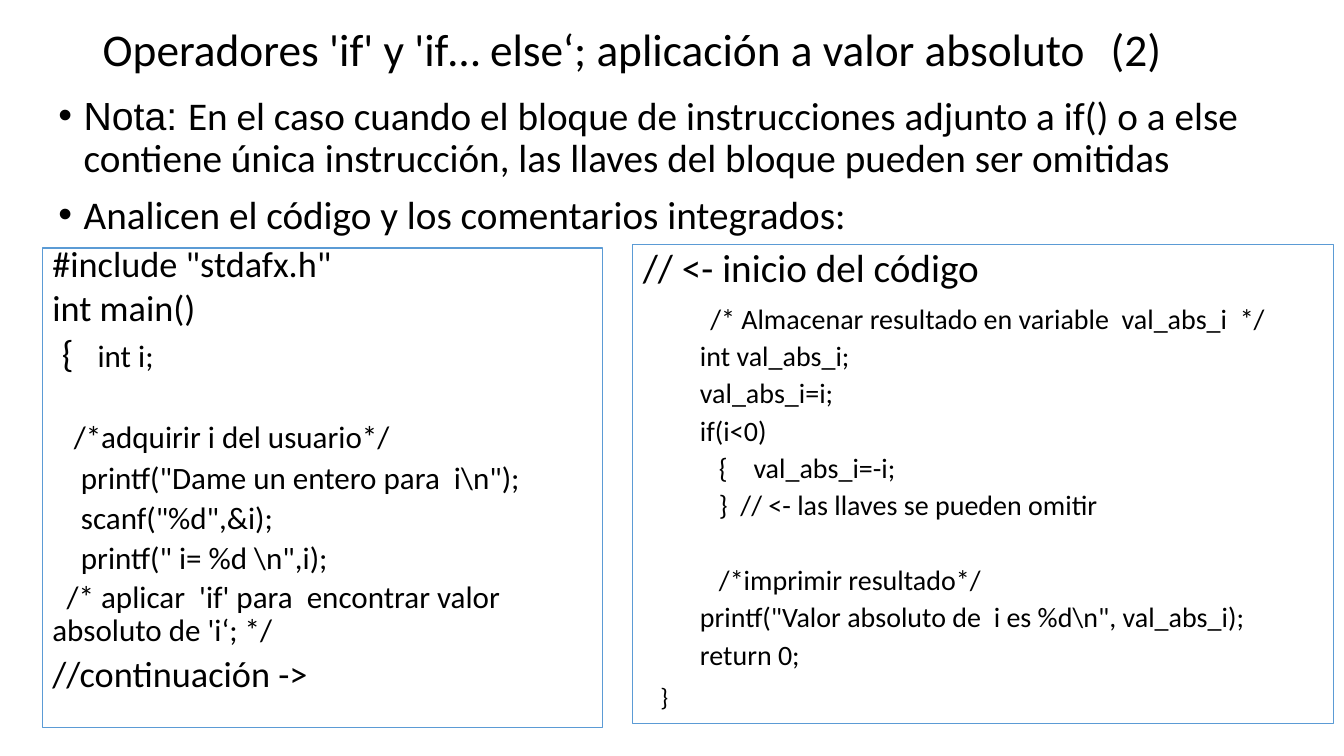
"""Slide on the 'if' and 'if… else' operators applied to the absolute value."""
from pptx import Presentation
from pptx.dml.color import RGBColor
from pptx.enum.shapes import MSO_SHAPE as Shape
from pptx.enum.text import MSO_ANCHOR as Anchor, PP_ALIGN as Align
from pptx.oxml.xmlchemy import OxmlElement
from pptx.util import Cm, Pt

COLORS = {"background": "FFFFFF", "text": "000000", "border": "5B9BD5"}
WRAPPED_COMMENT = "/* aplicar  'if' para  encontrar valor absoluto de 'i‘; */"


def add_paragraph(frame, text, size, spacing, before=0, margin=0, first=0):
    """Append one paragraph; margin and first-line indent are in centimetres."""
    paragraph = frame.paragraphs[0]
    if paragraph.runs:
        paragraph = frame.add_paragraph()
    paragraph.alignment = Align.LEFT
    paragraph.line_spacing = spacing
    paragraph.space_before = Pt(before)
    paragraph.font.name = "Calibri"
    paragraph.font.size = Pt(size)
    paragraph.font.color.rgb = RGBColor.from_string(COLORS["text"])
    properties = paragraph._p.get_or_add_pPr()
    properties.set("marL", str(Cm(margin)))
    properties.set("indent", str(Cm(first)))
    paragraph.add_run().text = text
    return paragraph


presentation = Presentation()
presentation.slide_width = Cm(33.87)
presentation.slide_height = Cm(19.05)
slide = presentation.slides.add_slide(presentation.slide_layouts[6])
slide.background.fill.solid()
slide.background.fill.fore_color.rgb = RGBColor.from_string(COLORS["background"])

title = slide.shapes.add_textbox(Cm(2.34), Cm(-0.03), Cm(29.21), Cm(2.67)).text_frame
title.word_wrap = True
title.vertical_anchor = Anchor.MIDDLE
add_paragraph(title, "Operadores 'if' y 'if… else‘; aplicación a valor absoluto\t(2)", 32.4, 0.9)

notes = [
    ("Nota: ", "En el caso cuando el bloque de instrucciones adjunto a if() o a else "
     "contiene única instrucción, las llaves del bloque pueden ser omitidas"),
    ("Analicen el código y los comentarios integrados:", ""),
]
body = slide.shapes.add_textbox(Cm(1.22), Cm(2.31), Cm(30.3), Cm(3.9)).text_frame
body.word_wrap = True
for lead, rest in notes:
    paragraph = add_paragraph(body, lead, 28, 0.9, 10, 0.64, -0.64)
    if rest:
        paragraph.runs[0].font.name = "Arial"
        paragraph.add_run().text = rest
    bullet_font = OxmlElement("a:buFont")
    bullet_font.set("typeface", "Arial")
    bullet = OxmlElement("a:buChar")
    bullet.set("char", "•")
    paragraph._p.get_or_add_pPr().extend([bullet_font, bullet])

# Each line: text, size, space before, left margin, first-line indent
input_code = [
    ('#include "stdafx.h"', 25.9, 10, 0, 0),
    ("int main()", 25.9, 10, 0, 0),
    ("{\tint i;", 22.2, 10, 1.14, -0.9),
    ("/*adquirir i del usuario*/", 22.2, 39, 0.54, 0),
    ('printf("Dame un entero para  i\\n");', 22.2, 10, 0.72, 0),
    ('scanf("%d",&i);', 22.2, 10, 0.72, 0),
    ('printf(" i= %d \\n",i);', 22.2, 10, 0.72, 0),
    (WRAPPED_COMMENT, 22.2, 5, 0, 0.36),
    ("//continuación ->", 25.9, 10, 0, 0),
]
result_code = [
    ("// <- inicio del código", 28, 10, 0, 0),
    ("/* Almacenar resultado en variable  val_abs_i  */", 20, 10, 1.7, 0),
    ("int val_abs_i;", 20, 5, 1.44, 0),
    ("val_abs_i=i;", 20, 5, 1.44, 0),
    ("if(i<0)", 20, 5, 1.44, 0),
    ("{\tval_abs_i=-i;", 20, 5, 2.79, -0.87),
    ("}  // <- las llaves se pueden omitir", 20, 5, 1.92, 0),
    ("/*imprimir resultado*/", 20, 32, 1.92, 0),
    ('printf("Valor absoluto de  i es %d\\n", val_abs_i);', 20, 5, 1.44, 0),
    ("return 0;", 20, 5, 1.44, 0),
    ("}", 18, 10, 0.44, 0),
]
code_boxes = [
    (1.07, 6.25, 14.12, 0.7, input_code),
    (15.95, 6.15, 17.65, 0.9, result_code),
]
for left, top, width, spacing, lines in code_boxes:
    box = slide.shapes.add_shape(Shape.RECTANGLE, Cm(left), Cm(top), Cm(width), Cm(12.09))
    box.shadow.inherit = False
    box.fill.background()
    box.line.color.rgb = RGBColor.from_string(COLORS["border"])
    box.line.width = Pt(0.75)
    frame = box.text_frame
    frame.word_wrap = True
    frame.vertical_anchor = Anchor.TOP
    for text, size, before, margin, first in lines:
        paragraph = add_paragraph(frame, text, size, spacing, before, margin, first)
        if text == WRAPPED_COMMENT:
            paragraph.line_spacing = 0.9
        if text == "{\tint i;":
            paragraph.runs[0].text = "{"
            paragraph.runs[0].font.size = Pt(26.8)
            paragraph.add_run().text = "\tint i;"

presentation.save("out.pptx")
